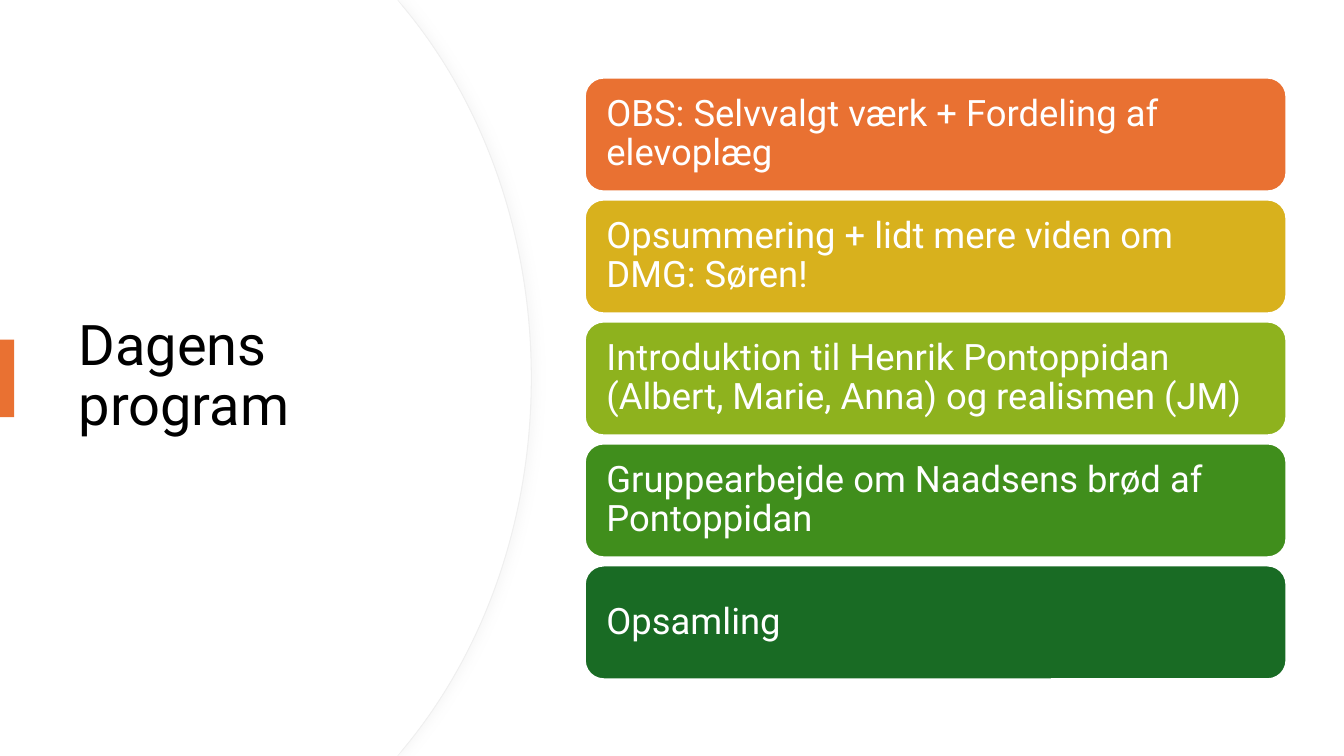
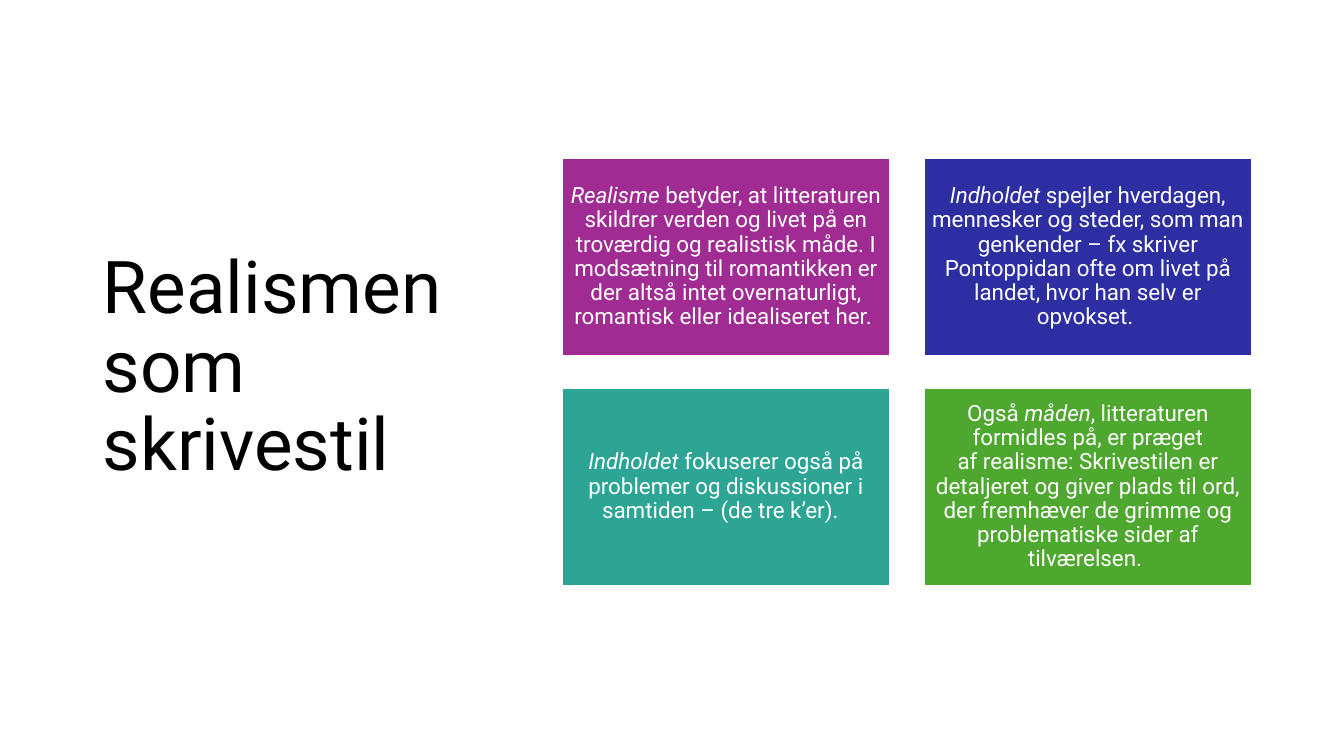
from lxml import etree
from pptx import Presentation
from pptx.dml.color import RGBColor
from pptx.enum.shapes import MSO_SHAPE
from pptx.enum.text import MSO_ANCHOR, MSO_AUTO_SIZE, PP_ALIGN
from pptx.oxml.ns import qn
from pptx.util import Inches, Pt

RECTANGLE = MSO_SHAPE.RECTANGLE
ROUNDED = MSO_SHAPE.ROUNDED_RECTANGLE
LEFT, CENTER = PP_ALIGN.LEFT, PP_ALIGN.CENTER
MIDDLE = MSO_ANCHOR.MIDDLE

WIDTH, HEIGHT = 13.33, 7.5
FONT = "Roboto"
WHITE, BLACK, ORANGE = "FFFFFF", "000000", "E97132"
PANEL_EDGE, PANEL_SHADOW = "EFEFEF", "D9D9D9"
NO_BREAK = chr(160)  # a space at which a line may not end

AGENDA_TITLE = "Dagens program"
AGENDA = [
    ("OBS: Selvvalgt værk + Fordeling af elevoplæg", ORANGE),
    ("Opsummering + lidt mere viden om DMG: Søren!", "D8B11D"),
    ("Introduktion til Henrik Pontoppidan (Albert, Marie, Anna) og realismen (JM)",
     "8EB21E"),
    ("Gruppearbejde om Naadsens brød af Pontoppidan", "408E1C"),
    ("Opsamling", "196B24"),
]

REALISM_TITLE = "Realismen som skrivestil"
# Each card is a list of (text, italic) runs and a fill colour.
REALISM = [
    ([("Realisme", True),
      (f"{NO_BREAK}betyder, at litteraturen skildrer verden og livet på en "
       "troværdig og realistisk måde. I modsætning til romantikken er der altså "
       "intet overnaturligt, romantisk eller idealiseret her. ", False)], "A02B93"),
    ([("Indholdet", True),
      (f"{NO_BREAK}spejler hverdagen, mennesker og steder, som man genkender – fx "
       "skriver Pontoppidan ofte om livet på landet, hvor han selv er opvokset. ",
       False)], "2C2EA2"),
    ([("Indholdet", True),
      (" fokuserer også på problemer og diskussioner i samtiden – "
       "(de tre k’er).  ", False)], "2DA594"),
    ([(f"Også{NO_BREAK}", False), ("måden", True),
      (f", litteraturen formidles på, er præget af{NO_BREAK}realisme: Skrivestilen "
       "er detaljeret og giver plads til ord, der fremhæver de grimme og "
       f"problematiske sider af tilværelsen.{NO_BREAK}", False)], "4EA72E"),
]


def color(hex_value):
    return RGBColor.from_string(hex_value)


def write(shape, runs, size, font_color=WHITE, align=LEFT, inset=0.1):
    """Fill a shape with one paragraph, given as a string or (text, italic) runs."""
    frame = shape.text_frame
    frame.word_wrap = True
    frame.auto_size = MSO_AUTO_SIZE.NONE
    frame.vertical_anchor = MIDDLE
    frame.margin_left = frame.margin_right = Inches(inset)
    frame.margin_top = frame.margin_bottom = Inches(0.07)
    paragraph = frame.paragraphs[0]
    paragraph.alignment = align
    paragraph.line_spacing = 0.9
    paragraph.space_before = Pt(0)
    for text, italic in [(runs, False)] if isinstance(runs, str) else runs:
        run = paragraph.add_run()
        run.text = text
        run.font.name = FONT
        run.font.size = Pt(size)
        run.font.italic = italic
        run.font.color.rgb = color(font_color)


def paint(shape, fill, line=None, line_width=1.5):
    shape.shadow.inherit = False
    shape.fill.solid()
    shape.fill.fore_color.rgb = color(fill)
    if line:
        shape.line.color.rgb = color(line)
        shape.line.width = Pt(line_width)
    else:
        shape.line.fill.background()


def add_box(slide, kind, box, fill, line=None):
    shape = slide.shapes.add_shape(kind, *map(Inches, box))
    paint(shape, fill, line)
    return shape


def add_title_slide(presentation, title, box, size):
    slide = presentation.slides.add_slide(presentation.slide_layouts[5])
    shape = slide.shapes.title
    shape.left, shape.top, shape.width, shape.height = map(Inches, box)
    write(shape, title, size, font_color=BLACK)
    return slide


def curve_segment(segment, controls):
    """Turn a straight freeform segment into a cubic curve with two controls."""
    segment.tag = qn("a:cubicBezTo")
    for index, (x, y) in enumerate(controls):
        point = etree.Element(qn("a:pt"), x=str(Inches(x)), y=str(Inches(y)))
        segment.insert(index, point)


def add_panel(slide, right, line=None):
    """Draw the panel at the left whose right side bulges out to `right`."""
    shoulder, bend = right - 1.26, right - 0.48
    outline = [(3.94, 0), (shoulder, 0.08), (right, HEIGHT / 2),
               (shoulder, HEIGHT - 0.08), (3.94, HEIGHT), (0, HEIGHT)]
    builder = slide.shapes.build_freeform(0, 0)
    builder.add_line_segments([(Inches(x), Inches(y)) for x, y in outline])
    panel = builder.convert_to_shape()
    segments = list(panel._element.iter(qn("a:lnTo")))
    upper = [(bend, 1.02), (right, 2.32)]
    lower = [(x, HEIGHT - y) for x, y in reversed(upper)]
    for segment, controls in zip(segments[2:4], (upper, lower)):
        # Rebuilt, as a renamed element keeps its old class.
        curve = etree.Element(qn("a:cubicBezTo"))
        curve.extend(list(segment))
        curve_segment(curve, controls)
        segment.getparent().replace(segment, curve)
    paint(panel, WHITE, line, 0.75)
    return panel


def add_shadow(shape, hex_value, alpha, blur, distance):
    effects = shape._element.spPr.find(qn("a:effectLst"))
    shadow = etree.SubElement(effects, qn("a:outerShdw"), blurRad=str(Pt(blur)),
                              dist=str(Pt(distance)), dir="0", rotWithShape="0")
    tint = etree.SubElement(shadow, qn("a:srgbClr"), val=hex_value)
    etree.SubElement(tint, qn("a:alpha"), val=str(alpha * 1000))


def build_agenda(presentation):
    slide = add_title_slide(presentation, AGENDA_TITLE, (0.68, 1.27, 3.94, 4.95), 40)
    title = slide.shapes.title._element
    add_shadow(add_panel(slide, 5.27, PANEL_EDGE), PANEL_SHADOW, 20, 7, 3)
    add_panel(slide, 5.26)
    title.getparent().append(title)  # the title lies in front of the panel
    add_box(slide, RECTANGLE, (0, 3.37, 0.14, 0.77), ORANGE)

    left, top, width, height, gap = 5.8, 0.77, 6.96, 1.13, 0.08
    for row, (text, fill) in enumerate(AGENDA):
        box = (left, top + row * (height + gap), width, height)
        write(add_box(slide, ROUNDED, box, fill, WHITE), text, 26, inset=0.16)


def build_realism(presentation):
    slide = add_title_slide(presentation, REALISM_TITLE, (0.92, 0.61, 3.69, 6.09), 52)
    left, top, width, height = 5.57, 1.57, 3.26, 1.96
    column_gap, row_gap, columns = 0.33, 0.32, 2
    for index, (runs, fill) in enumerate(REALISM):
        row, column = divmod(index, columns)
        box = (left + column * (width + column_gap),
               top + row * (height + row_gap), width, height)
        card = add_box(slide, RECTANGLE, box, fill, WHITE)
        write(card, runs, 16, align=CENTER, inset=0.07)


def main():
    presentation = Presentation()
    presentation.slide_width = Inches(WIDTH)
    presentation.slide_height = Inches(HEIGHT)
    build_agenda(presentation)
    build_realism(presentation)
    presentation.save("out.pptx")


if __name__ == "__main__":
    main()
